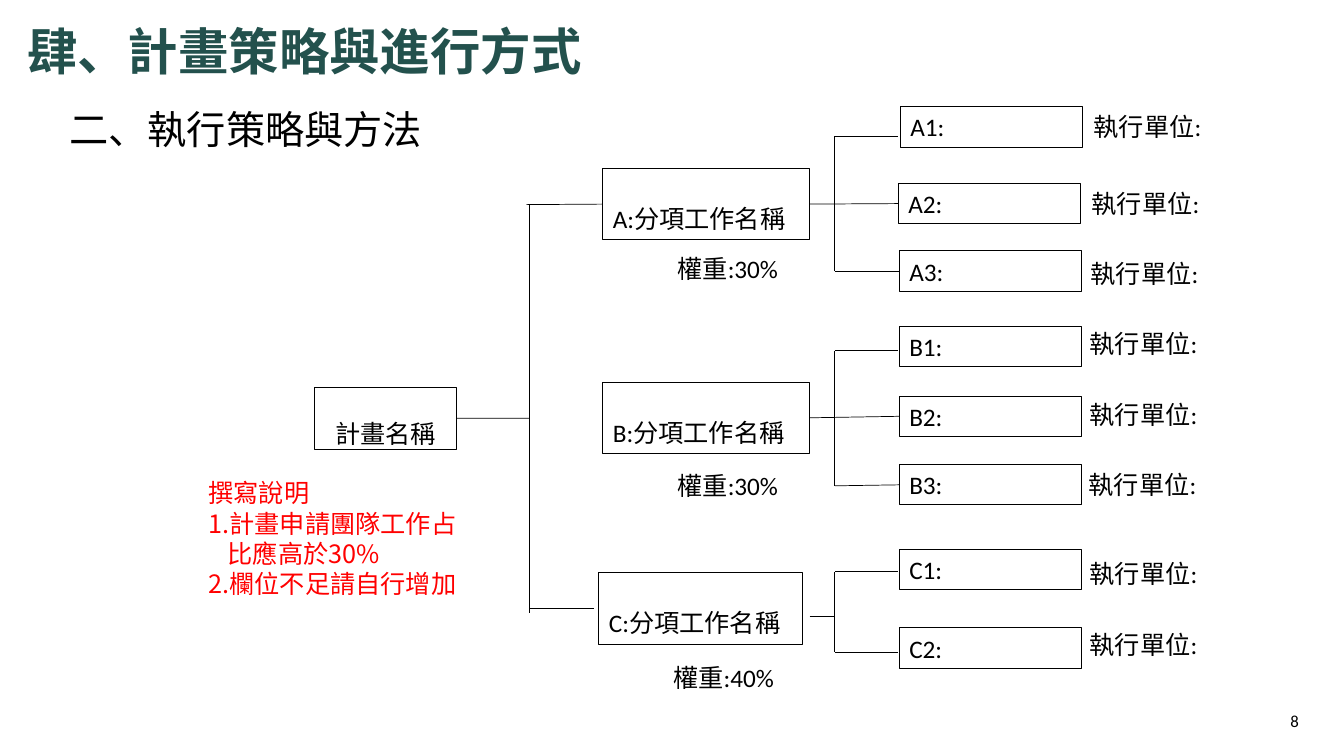
from dataclasses import dataclass

from lxml import etree
from pptx import Presentation
from pptx.dml.color import RGBColor
from pptx.enum.shapes import MSO_CONNECTOR, MSO_SHAPE
from pptx.enum.text import MSO_ANCHOR, PP_ALIGN
from pptx.oxml.ns import qn
from pptx.util import Inches, Pt

RECT = MSO_SHAPE.RECTANGLE
STRAIGHT = MSO_CONNECTOR.STRAIGHT
TOP, MIDDLE = MSO_ANCHOR.TOP, MSO_ANCHOR.MIDDLE
LEFT, CENTER = PP_ALIGN.LEFT, PP_ALIGN.CENTER
LEFT_SITE, RIGHT_SITE = 1, 3


@dataclass(frozen=True)
class Theme:
    """Colours, fonts and type sizes of the slide."""
    title: RGBColor = RGBColor(0x23, 0x51, 0x4D)
    ink: RGBColor = RGBColor(0, 0, 0)
    paper: RGBColor = RGBColor(255, 255, 255)
    note: RGBColor = RGBColor(255, 0, 0)
    latin: str = "Calibri"
    cjk: str = "Noto Sans CJK SC"
    title_size: int = 36
    heading_size: int = 28
    body_size: int = 18
    number_size: int = 12
    border: float = 0.75
    link: float = 0.5


@dataclass(frozen=True)
class Branch:
    """One work item: its box, fork and leaves (name, left, top, unit left, unit top)."""
    name: str
    weight: str
    box: tuple
    weight_top: float
    fork_y: float
    reach: float
    leaves: tuple


T = Theme()
SPINE_X = 8.28
TRUNK_X = 5.25
BRANCHES = (
    Branch("A", "30%", (5.98, 1.67, 2.05, 0.71), 2.46, 2.02, 0.67, (
        ("A1:", 8.93, 1.06, 10.75, 1.06),
        ("A2:", 8.91, 1.82, 10.73, 1.82),
        ("A3:", 8.92, 2.49, 10.72, 2.51))),
    Branch("B", "30%", (5.98, 3.79, 2.05, 0.71), 4.62, 4.15, 0.67, (
        ("B1:", 8.92, 3.24, 10.71, 3.21),
        ("B2:", 8.92, 3.93, 10.71, 3.91),
        ("B3:", 8.92, 4.61, 10.7, 4.61))),
    Branch("C", "40%", (5.94, 5.68, 2.02, 0.71), 6.52, 6.07, 0.4, (
        ("C1:", 8.92, 5.45, 10.71, 5.49),
        ("C2:", 8.92, 6.23, 10.71, 6.19))),
)


def format_run(r, size, color, font, bold=False):
    """Set the type of a run for Latin and East Asian letters."""
    r.font.size, r.font.bold, r.font.name = Pt(size), bold, font
    r.font.color.rgb = color
    ea = etree.SubElement(r.font._element, qn("a:ea"))
    ea.set("typeface", T.cjk)


def fill_text(sp, text, size=T.body_size, color=T.ink, font=T.latin,
              bold=False, align=LEFT, anchor=TOP, spacing=None):
    """Write text into a shape and format all of it."""
    tf = sp.text_frame
    tf.text = text
    tf.word_wrap = True
    tf.vertical_anchor = anchor
    for p in tf.paragraphs:
        p.alignment = align
        if spacing:
            p.line_spacing = spacing
        for r in p.runs:
            format_run(r, size, color, font, bold)
    return sp


def add_label(s, box, text, **style):
    """Add a plain text box."""
    return fill_text(s.shapes.add_textbox(*map(Inches, box)), text, **style)


def add_box(s, box, text, **style):
    """Add a bordered white rectangle with text."""
    sp = s.shapes.add_shape(RECT, *map(Inches, box))
    sp.shadow.inherit = False
    sp.fill.solid()
    sp.fill.fore_color.rgb = T.paper
    sp.line.color.rgb = T.ink
    sp.line.width = Pt(T.border)
    return fill_text(sp, text, **style)


def add_link(s, x1, y1, x2, y2, source=None, target=None):
    """Draw a thin line, joined to the side of a box where one is given."""
    line = s.shapes.add_connector(STRAIGHT, *map(Inches, (x1, y1, x2, y2)))
    line.line.color.rgb = T.ink
    line.line.width = Pt(T.link)
    etree.SubElement(line._element.spPr, qn("a:effectLst"))
    if source is not None:
        line.begin_connect(source, RIGHT_SITE)
    if target is not None:
        line.end_connect(target, LEFT_SITE)


def add_header(s, left, top):
    """Place the title and the section heading."""
    add_label(s, (left, top, 6.9, 0.71), "肆、計畫策略與進行方式",
              size=T.title_size, color=T.title, font=T.cjk, bold=True)
    add_label(s, (left + 0.42, top + 0.85, 4.18, 0.57), "二、執行策略與方法",
              size=T.heading_size)


def add_root(s, left, top, width, height):
    """Place the plan box and the line to the trunk."""
    root = add_box(s, (left, top, width, height), "計畫名稱",
                   align=CENTER, anchor=MIDDLE, spacing=2)
    y = top + height / 2
    add_link(s, left + width, y, TRUNK_X, y, source=root)


def add_branch(s, branch):
    """Place a work item with its weight, fork, leaves and units."""
    left, top = branch.box[:2]
    item = add_box(s, branch.box, f"{branch.name}:分項工作名稱", spacing=2)
    add_label(s, (left + 0.64, branch.weight_top, 1.5, 0.4),
              f"權重:{branch.weight}")
    boxes = []
    for name, x, y, unit_x, unit_y in branch.leaves:
        boxes.append(add_box(s, (x, y, 1.81, 0.4), name))
        add_label(s, (unit_x, unit_y, 1.5, 0.4), "執行單位:")
    upper, lower = branch.fork_y - branch.reach, branch.fork_y + branch.reach
    add_link(s, SPINE_X, lower, SPINE_X, upper)
    add_link(s, SPINE_X, upper, 8.91, upper)
    if len(boxes) == 3:
        add_link(s, SPINE_X, lower, 8.91, lower, target=boxes[2])
        add_link(s, 8.03, branch.fork_y, 8.91, branch.fork_y, item, boxes[1])
    else:
        add_link(s, SPINE_X, lower, 8.91, lower)
        add_link(s, 8.03, 6.11, SPINE_X, 6.11)
    return item


def add_trunk(s, top, bottom, first):
    """Draw the trunk and its arms to the first and last work items."""
    add_link(s, TRUNK_X, bottom, TRUNK_X, top)
    add_link(s, 5.22, top + 0.01, 5.98, top, target=first)
    add_link(s, TRUNK_X, bottom - 0.04, 5.89, bottom - 0.04)


def add_note(s, box):
    """Place the red writing guide with its numbered points."""
    sp = add_label(
        s, box, "撰寫說明\n計畫申請團隊工作占比應高於30%\n欄位不足請自行增加",
        color=T.note, font=T.cjk)
    for p in sp.text_frame.paragraphs[1:]:
        pPr = p._p.get_or_add_pPr()
        pPr.set("marL", str(Inches(0.19)))
        pPr.set("indent", str(Inches(-0.19)))
        etree.SubElement(pPr, qn("a:buFont")).set("typeface", T.cjk)
        etree.SubElement(pPr, qn("a:buAutoNum")).set("type", "arabicPeriod")


def main():
    """Build and save the slide."""
    prs = Presentation()
    prs.slide_width, prs.slide_height = Inches(13.33), Inches(7.5)
    s = prs.slides.add_slide(prs.slide_layouts[6])
    add_header(s, 0.17, 0.15)
    add_root(s, 3.12, 3.84, 1.41, 0.62)
    items = [add_branch(s, branch) for branch in BRANCHES]
    add_trunk(s, 2.02, 6.08, items[0])
    add_note(s, (1.97, 4.69, 2.66, 1.31))
    add_label(s, (12.54, 6.95, 0.6, 0.4), "8", size=T.number_size,
              align=CENTER, anchor=MIDDLE)
    prs.save("out.pptx")


if __name__ == "__main__":
    main()
